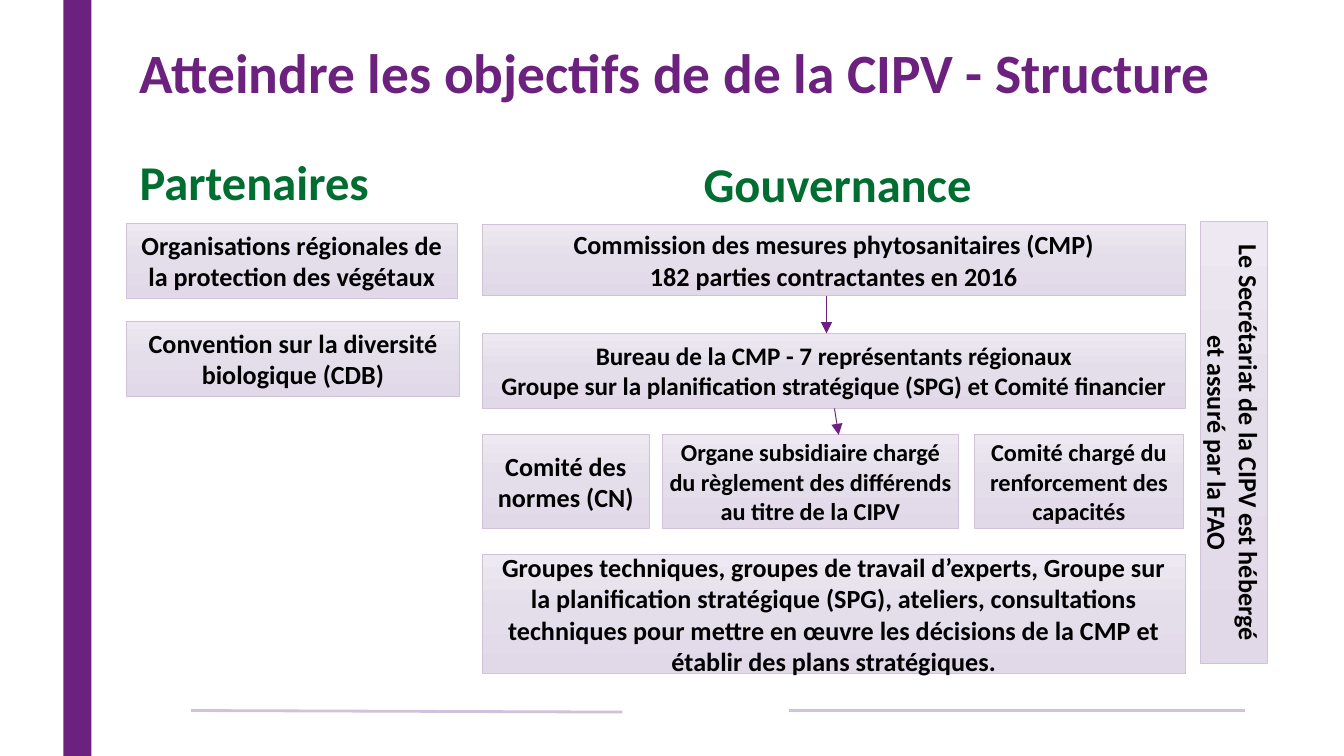
from copy import deepcopy
from lxml.etree import SubElement
from pptx import Presentation
from pptx.dml.color import RGBColor
from pptx.enum.shapes import MSO_CONNECTOR, MSO_SHAPE
from pptx.enum.text import MSO_ANCHOR, PP_ALIGN
from pptx.oxml.ns import qn
from pptx.util import Cm, Pt

PURPLE, GREEN, LILAC, BLACK = "6C217F", "006E31", "CFC2D9", "000000"
GRADIENT = [(0, "EDE8F1"), (0.5, "E4DDEA"), (1, "E1D8E8")]
FONT = "Calibri"
PARTNER_LEFT, GOVERNANCE_LEFT, GOVERNANCE_WIDTH = 2.39, 9.12, 13.28
COMMITTEE_TOP, COMMITTEE_HEIGHT = 8.21, 1.78

HEADINGS = [
    ("Atteindre les objectifs de de la CIPV - Structure",
     (2.39, 0.05, 20.96, 2.77), 29.7, PURPLE, PP_ALIGN.LEFT, MSO_ANCHOR.MIDDLE),
    ("Partenaires", (2.39, 2.87, 7.16, 9.65), 26, GREEN, PP_ALIGN.LEFT, MSO_ANCHOR.TOP),
    ("Gouvernance", (9.8, 2.92, 12.07, 9.12), 26, GREEN, PP_ALIGN.CENTER, MSO_ANCHOR.TOP),
]
PARTNERS = [
    (["Organisations régionales de la protection des végétaux"], 4.22, 6.25),
    (["Convention sur la diversité biologique (CDB)"], 6.07, 6.3),
]
GOVERNANCE = [
    (["Commission des mesures phytosanitaires (CMP)",
      "182 parties contractantes en 2016"], 4.24, 1.35, 14),
    (["Bureau de la CMP - 7 représentants régionaux",
      "Groupe sur la planification stratégique (SPG) et Comité financier"], 6.3, 1.42, 13.5),
    (["Groupes techniques, groupes de travail d’experts, Groupe sur la planification "
      "stratégique (SPG), ateliers, consultations techniques pour mettre en œuvre les "
      "décisions de la CMP et établir des plans stratégiques."], 10.49, 2.24, 14),
]
COMMITTEES = [
    ("Comité des normes (CN)", 9.12, 3.15, 14, None),
    ("Organe subsidiaire chargé du règlement des différends au titre de la CIPV",
     12.52, 5.59, 13, 0.1),
    ("Comité chargé du renforcement des capacités", 18.41, 3.96, 13, None),
]
SECRETARIAT = "Le Secrétariat de la CIPV est hébergé et assuré par la FAO"
FOOTER_LINES = [(11.76, 13.46, 3.61, 13.43), (14.91, 13.43, 23.53, 13.43)]
ARROWS = [(15.62, 5.6, 15.62, 6.3), (15.77, 7.72, 15.85, 8.22)]


def color(value):
    return RGBColor.from_string(value)


def write(frame, lines, size, ink, align, spacing=None):
    frame.word_wrap = True
    for index, line in enumerate(lines):
        para = frame.paragraphs[0] if index == 0 else frame.add_paragraph()
        para.alignment = align
        para.line_spacing = spacing
        span = para.add_run()
        span.text = line
        span.font.name = FONT
        span.font.size = Pt(size)
        span.font.bold = True
        span.font.color.rgb = color(ink)


def add_heading(page, text, place, size, ink, align, anchor):
    frame = page.shapes.add_textbox(*map(Cm, place)).text_frame
    write(frame, [text], size, ink, align, 0.9)
    frame.vertical_anchor = anchor


def add_rectangle(page, *place):
    box = page.shapes.add_shape(MSO_SHAPE.RECTANGLE, *map(Cm, place))
    box.shadow.inherit = False
    return box


def add_box(page, lines, place, size=14, inset=None):
    box = add_rectangle(page, *place)
    box.fill.gradient()
    box.fill.gradient_angle = 270
    stop_list = box._element.spPr.find(".//" + qn("a:gsLst"))
    stop_list.append(deepcopy(stop_list[-1]))
    for stop, (position, tint) in zip(box.fill.gradient_stops, GRADIENT):
        stop.position = position
        stop.color.rgb = color(tint)
    box.line.color.rgb = color(LILAC)
    box.line.width = Pt(0.5)
    frame = box.text_frame
    frame.vertical_anchor = MSO_ANCHOR.MIDDLE
    if inset is not None:
        frame.margin_left = frame.margin_right = Cm(inset)
        frame.margin_top = frame.margin_bottom = Cm(inset)
    write(frame, lines, size, BLACK, PP_ALIGN.CENTER)
    return box


def add_line(page, ends, ink, width, arrow=False):
    line = page.shapes.add_connector(MSO_CONNECTOR.STRAIGHT, *map(Cm, ends))
    line.line.color.rgb = color(ink)
    line.line.width = Pt(width)
    if arrow:
        SubElement(line.line._get_or_add_ln(), qn("a:tailEnd"), type="triangle")
    SubElement(line._element.spPr, qn("a:effectLst"))


def main():
    deck = Presentation()
    deck.slide_width, deck.slide_height = Cm(25.4), Cm(14.29)
    page = deck.slides.add_slide(deck.slide_layouts[6])

    band = add_rectangle(page, 1.2, 0, 0.53, 14.29)
    band.fill.solid()
    band.fill.fore_color.rgb = color(PURPLE)
    band.line.fill.background()
    for ends in FOOTER_LINES:
        add_line(page, ends, LILAC, 1.5)
    for heading in HEADINGS:
        add_heading(page, *heading)

    for lines, top, height, size in GOVERNANCE:
        add_box(page, lines, (GOVERNANCE_LEFT, top, GOVERNANCE_WIDTH, height), size)
    for text, left, width, size, inset in COMMITTEES:
        add_box(page, [text], (left, COMMITTEE_TOP, width, COMMITTEE_HEIGHT), size, inset)
    for lines, top, width in PARTNERS:
        add_box(page, lines, (PARTNER_LEFT, top, width, 1.42))
    secretariat = add_box(page, [SECRETARIAT], (22.68, 4.19, 1.27, 8.36))
    secretariat.text_frame._txBody.bodyPr.set("vert", "vert")
    for ends in ARROWS:
        add_line(page, ends, PURPLE, 0.5, arrow=True)

    deck.save("out.pptx")


if __name__ == "__main__":
    main()
